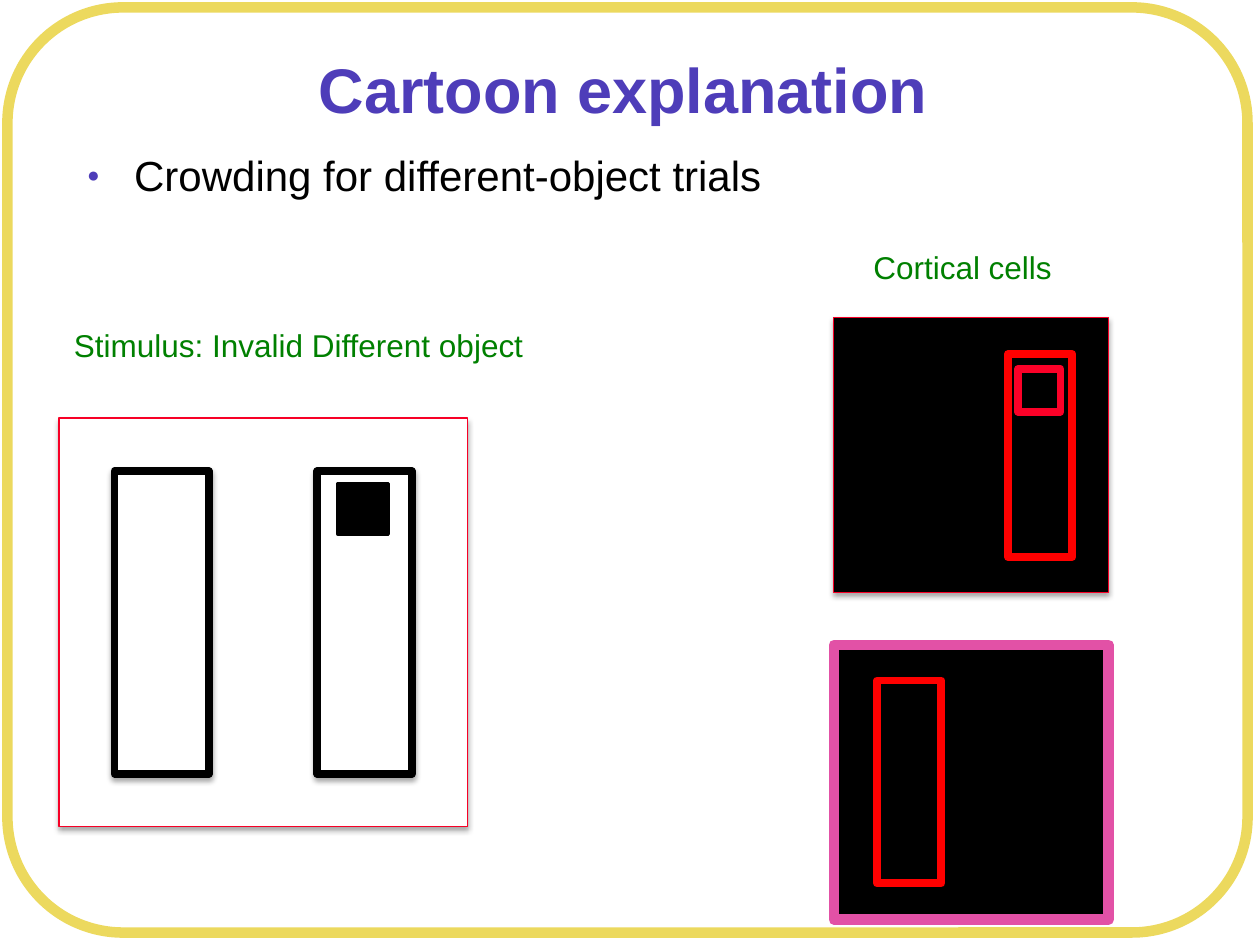
from lxml import etree
from pptx import Presentation
from pptx import util as u
from pptx.dml.color import RGBColor
from pptx.enum import shapes, text
from pptx.oxml.ns import qn

THEME = {
    "font": "Arial",
    "sizes": {"title": 36, "body": 24, "label": 18},
    "violet": "4E3DB9", "green": "008000", "black": "000000", "white": "FFFFFF",
    "yellow": "ECD95E", "crimson": "F70026", "red": "FF0000",
    "scarlet": "FC0128", "pink": "E251A6",
}

# Content: positions are left, top, width, height in cm
TITLE = ("Cartoon explanation", (2.62, 0.84, 19.89, 2.08))
BULLET = ("Crowding for different-object trials", (1.5, 2.74, 21.82, 3.4))
LABELS = [
    ("Stimulus: Invalid Different object", (1.24, 6.45, 10.13, 1.02), text.PP_ALIGN.LEFT),
    ("Cortical cells", (17.27, 4.88, 4.27, 1.02), text.PP_ALIGN.CENTER),
]
FRAME = (0.15, 0.15, 25, 18.65)
PANEL, CELL = (8.23, 8.23), (5.54, 5.54)
BAR, CELL_BAR = (1.9, 6.1), (1.3, 4.09)
# Place, size, fill, line colour, line width in points, shadow
RECTANGLES = [
    ((1.19, 8.43), PANEL, "white", "crimson", 0.75, True),
    ((2.31, 9.5), BAR, "white", "black", 4.5, True),
    ((6.4, 9.5), BAR, "white", "black", 4.5, True),
    ((16.81, 6.4), CELL, "black", "crimson", 0.75, True),
    ((20.32, 7.14), CELL_BAR, "black", "red", 4.5, True),
    ((16.81, 13), CELL, "black", "pink", 6, False),
    ((17.68, 13.72), CELL_BAR, "black", "red", 4.5, True),
    ((6.81, 9.75), (1.02, 1.02), "black", "black", 2, False),
    ((20.52, 7.44), (0.86, 0.86), None, "scarlet", 4.5, False),
]


def color(name):
    return RGBColor.from_string(THEME[name])


def child(parent, tag, **attributes):
    return etree.SubElement(parent, qn(tag), attributes)


def place(part, box):
    part.left, part.top, part.width, part.height = map(u.Cm, box)


def write(part, words, role, color_name, align, bold=False):
    part.text_frame.text = words
    part.text_frame.word_wrap = True
    part.text_frame.auto_size = text.MSO_AUTO_SIZE.NONE
    paragraph = part.text_frame.paragraphs[0]
    paragraph.alignment = align
    font = paragraph.runs[0].font
    font.name, font.size, font.bold = THEME["font"], u.Pt(THEME["sizes"][role]), bold
    font.color.rgb = color(color_name)
    return paragraph


def add_outline(slide, kind, box, fill, line, width, shadow=False):
    outline = slide.shapes.add_shape(kind, *map(u.Cm, box))
    outline.shadow.inherit = False
    if fill:
        outline.fill.solid()
        outline.fill.fore_color.rgb = color(fill)
    else:
        outline.fill.background()
    outline.line.color.rgb = color(line)
    outline.line.width = u.Pt(width)
    if shadow:
        effects = outline._element.spPr.find(qn("a:effectLst"))
        cast = child(effects, "a:outerShdw", blurRad=str(u.Pt(3.1)), dist=str(u.Pt(1.8)),
                     dir="5400000", algn="ctr", rotWithShape="0")
        tone = child(cast, "a:srgbClr", val=THEME["black"])
        child(tone, "a:alpha", val="35000")
    return outline


def add_bullet(paragraph):
    properties = paragraph._p.get_or_add_pPr()
    properties.set("marL", str(u.Cm(0.95)))
    properties.set("indent", str(-u.Cm(0.95)))
    child(child(properties, "a:buClr"), "a:srgbClr", val=THEME["violet"])
    child(properties, "a:buSzPct", val="50000")
    child(properties, "a:buFont", typeface=THEME["font"])
    child(properties, "a:buChar", char="●")


def main():
    deck = Presentation()
    deck.slide_width, deck.slide_height = u.Cm(25.4), u.Cm(19.05)
    slide = deck.slides.add_slide(deck.slide_layouts[1])

    # Rounded frame
    frame = add_outline(slide, shapes.MSO_SHAPE.ROUNDED_RECTANGLE, FRAME, None, "yellow", 6)
    frame.adjustments[0] = 0.125

    # Title and bullet
    title, body = slide.placeholders
    place(title, TITLE[1])
    heading = write(title, TITLE[0], "title", "violet", text.PP_ALIGN.CENTER, bold=True)
    heading.line_spacing = 0.9
    title.text_frame.vertical_anchor = text.MSO_ANCHOR.MIDDLE
    place(body, BULLET[1])
    point = write(body, BULLET[0], "body", "black", text.PP_ALIGN.LEFT)
    point.line_spacing, point.space_before = 1.15, u.Pt(7.2)
    add_bullet(point)

    # Labels
    for words, box, align in LABELS:
        label = slide.shapes.add_textbox(*map(u.Cm, box))
        write(label, words, "label", "green", align)

    # Stimulus and cortical cells
    for position, size, *style in RECTANGLES:
        add_outline(slide, shapes.MSO_SHAPE.RECTANGLE, position + size, *style)

    deck.save("out.pptx")


if __name__ == "__main__":
    main()
